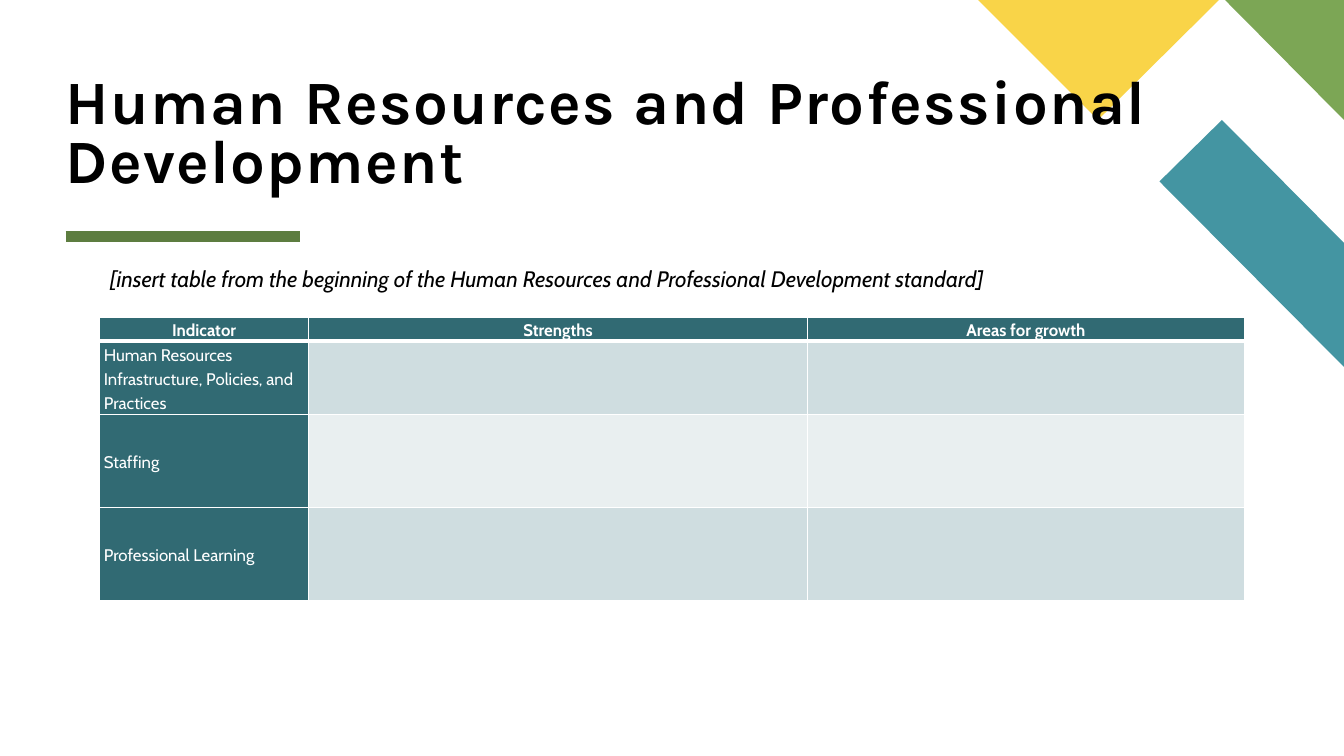
from dataclasses import dataclass
from typing import Optional

from lxml import etree
from pptx import Presentation
from pptx.dml.color import RGBColor
from pptx.enum.shapes import MSO_CONNECTOR
from pptx.enum.text import MSO_ANCHOR, MSO_AUTO_SIZE, PP_ALIGN
from pptx.oxml.ns import qn
from pptx.slide import Slide
from pptx.table import _Cell
from pptx.text.text import TextFrame
from pptx.util import Pt

PX = 9144
LEFT, CENTER = PP_ALIGN.LEFT, PP_ALIGN.CENTER
TOP, MIDDLE, BOTTOM = MSO_ANCHOR.TOP, MSO_ANCHOR.MIDDLE, MSO_ANCHOR.BOTTOM
NO_AUTOFIT = MSO_AUTO_SIZE.NONE
STRAIGHT = MSO_CONNECTOR.STRAIGHT

COLORS = {
    "black": "000000",
    "white": "FFFFFF",
    "teal": "4495A2",
    "green": "7CA655",
    "yellow": "F9D448",
    "rule": "5D7D40",
    "header": "316A73",
    "band_dark": "CFDDE0",
    "band_light": "E9EFF0",
}


@dataclass(frozen=True)
class Decoration:
    color: str
    points: tuple[tuple[int, int], ...]


DECORATIONS = (
    Decoration("teal", ((1333, 364), (1333, 241), (1212, 119), (1150, 180))),
    Decoration("green", ((1333, 119), (1333, 0), (1215, 0))),
    Decoration("yellow", ((970, 0), (1089, 119), (1209, 0))),
)

HEADINGS = ("Indicator", "Strengths", "Areas for growth")
INDICATORS = (
    "Human Resources Infrastructure, Policies, and Practices",
    "Staffing",
    "Professional Learning",
)
COLUMN_WIDTHS = (207, 495, 433)
ROW_HEIGHTS = (21, 73, 92, 92)


def rgb(name: str) -> RGBColor:
    return RGBColor.from_string(COLORS[name])


def write_text(frame: TextFrame, text: str, *, size: int, font: str = "Cabin",
               color: str = "black", bold: bool = False, italic: bool = False,
               align: PP_ALIGN = LEFT, line_spacing: Optional[float] = None,
               before: int = 0, after: int = 0, indent: int = 0,
               tracking: int = 0) -> None:
    paragraph = frame.paragraphs[0]
    paragraph.alignment = align
    paragraph.space_before, paragraph.space_after = Pt(before), Pt(after)
    if line_spacing:
        paragraph.line_spacing = line_spacing
    if indent:
        properties = paragraph._p.get_or_add_pPr()
        properties.set("marL", str(indent * PX))
        properties.set("indent", "0")
    run = paragraph.add_run()
    run.text = text
    run.font.name, run.font.size = font, Pt(size)
    run.font.bold, run.font.italic = bold, italic
    run.font.color.rgb = rgb(color)
    if tracking:
        run.font._element.set("spc", str(tracking * 100))


def set_frame(frame: TextFrame, anchor: MSO_ANCHOR,
              margins: tuple[int, int, int, int]) -> None:
    frame.word_wrap = True
    frame.auto_size = NO_AUTOFIT
    frame.vertical_anchor = anchor
    (frame.margin_left, frame.margin_top,
     frame.margin_right, frame.margin_bottom) = (margin * PX for margin in margins)


def draw_decoration(slide: Slide, decoration: Decoration) -> None:
    start, *others = decoration.points
    builder = slide.shapes.build_freeform(*start, scale=PX)
    builder.add_line_segments(others, close=True)
    shape = builder.convert_to_shape()
    shape.shadow.inherit = False
    shape.fill.solid()
    shape.fill.fore_color.rgb = rgb(decoration.color)
    shape.line.fill.background()


def draw_rule(slide: Slide) -> None:
    rule = slide.shapes.add_connector(STRAIGHT, 65 * PX, 235 * PX, 298 * PX, 235 * PX)
    rule.line.color.rgb = rgb("rule")
    rule.line.width = Pt(8)
    etree.SubElement(rule._element.spPr, qn("a:effectLst"))


def format_title(slide: Slide) -> None:
    title = slide.shapes.title
    title.left, title.top, title.width, title.height = (
        length * PX for length in (65, 22, 1200, 172))
    set_frame(title.text_frame, BOTTOM, (0, 0, 0, 0))
    write_text(title.text_frame, "Human Resources and Professional Development",
               size=44, font="Karla", bold=True, line_spacing=0.8, tracking=1)
    slide.shapes._spTree.append(title._element)


def draw_instruction(slide: Slide) -> None:
    box = slide.shapes.add_textbox(65 * PX, 258 * PX, 1200 * PX, 80 * PX)
    set_frame(box.text_frame, TOP, (0, 5, 10, 5))
    write_text(box.text_frame,
               "[insert table from the beginning of the Human Resources and "
               "Professional Development standard]",
               size=16, italic=True, before=6, indent=44)


def format_cell(cell: _Cell, fill: str, bottom_width: int) -> None:
    cell.margin_left = cell.margin_right = 4 * PX
    cell.margin_top = cell.margin_bottom = 0
    properties = cell._tc.get_or_add_tcPr()
    for side, width in (("L", 1), ("R", 1), ("T", 1), ("B", bottom_width)):
        border = etree.SubElement(properties, qn(f"a:ln{side}"), w=str(Pt(width)))
        solid = etree.SubElement(border, qn("a:solidFill"))
        etree.SubElement(solid, qn("a:srgbClr"), val=COLORS["white"])
    cell.fill.solid()
    cell.fill.fore_color.rgb = rgb(fill)


def draw_table(slide: Slide) -> None:
    table = slide.shapes.add_table(
        len(ROW_HEIGHTS), len(COLUMN_WIDTHS), 99 * PX, 315 * PX,
        sum(COLUMN_WIDTHS) * PX, sum(ROW_HEIGHTS) * PX).table
    for column, width in zip(table.columns, COLUMN_WIDTHS):
        column.width = width * PX
    for row, height in zip(table.rows, ROW_HEIGHTS):
        row.height = height * PX
    rows = (HEADINGS, *((indicator, "", "") for indicator in INDICATORS))
    for row_index, texts in enumerate(rows):
        is_header = row_index == 0
        band = "band_dark" if row_index % 2 else "band_light"
        for column_index, text in enumerate(texts):
            cell = table.cell(row_index, column_index)
            format_cell(cell, "header" if text else band, 3 if is_header else 1)
            cell.vertical_anchor = TOP if is_header else MIDDLE
            if text:
                write_text(cell.text_frame, text, size=12, color="white",
                           bold=is_header, align=CENTER if is_header else LEFT,
                           line_spacing=1.15, before=2, after=2)


def main() -> None:
    presentation = Presentation()
    presentation.slide_width, presentation.slide_height = 1333 * PX, 750 * PX
    slide = presentation.slides.add_slide(presentation.slide_layouts[5])
    for decoration in DECORATIONS:
        draw_decoration(slide, decoration)
    draw_rule(slide)
    format_title(slide)
    draw_instruction(slide)
    draw_table(slide)
    presentation.save("out.pptx")


if __name__ == "__main__":
    main()
